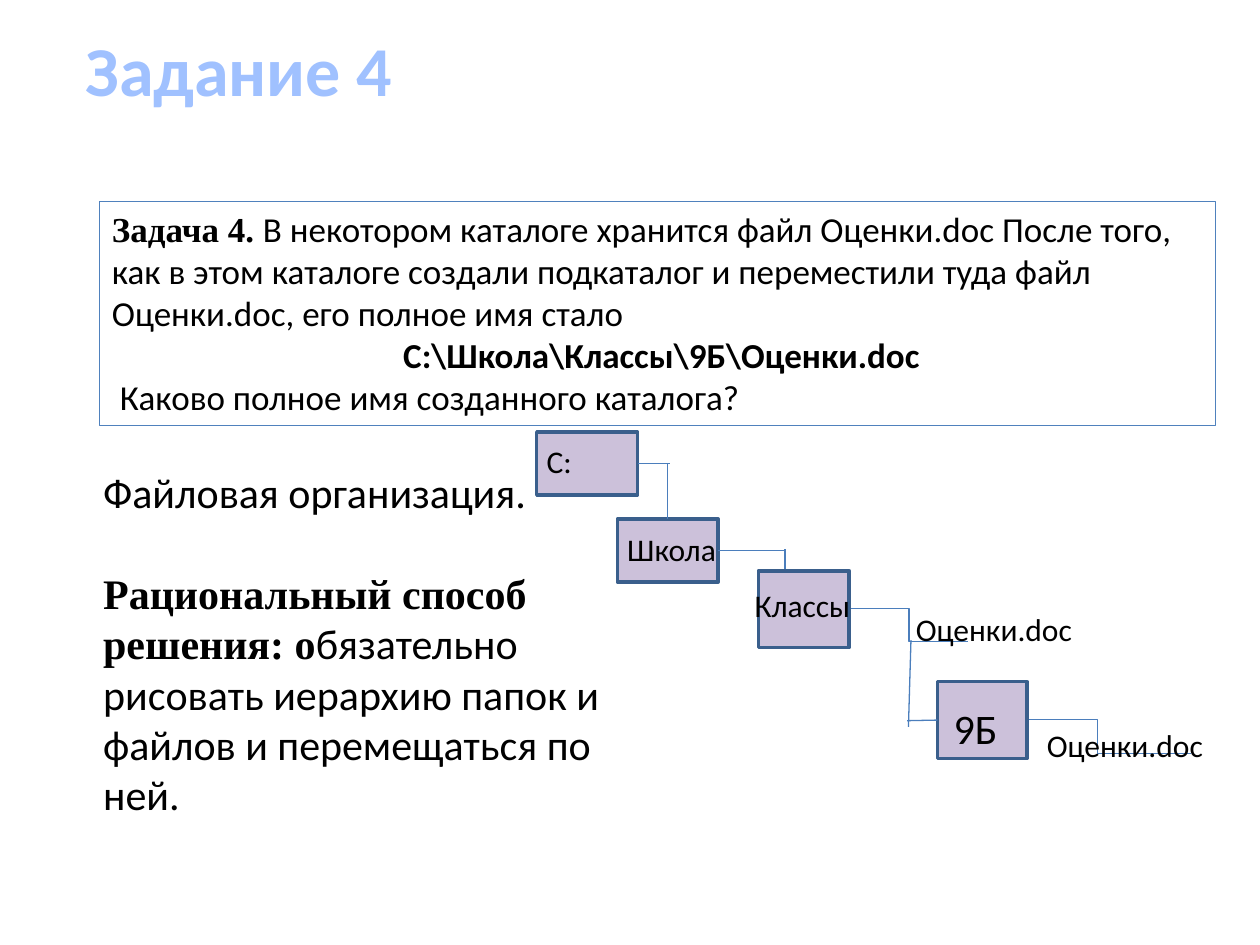
from dataclasses import dataclass

from pptx import Presentation
from pptx.dml.color import RGBColor
from pptx.enum.shapes import MSO_CONNECTOR as Link, MSO_SHAPE as Form
from pptx.enum.text import MSO_ANCHOR as Anchor, PP_ALIGN as Align
from pptx.oxml.ns import qn
from pptx.util import Inches, Pt
from lxml.etree import SubElement

BLACK = RGBColor(0, 0, 0)
WHITE = RGBColor(0xFF, 0xFF, 0xFF)
SKY = RGBColor(0xA0, 0xC1, 0xFF)
BLUE = RGBColor(0x4F, 0x81, 0xBD)
WIRE = RGBColor(0x4B, 0x7E, 0xBC)
EDGE = RGBColor(0x3A, 0x5F, 0x8C)
LILAC = RGBColor(0xCC, 0xC1, 0xDA)
SANS, SERIF = "Calibri", "Times New Roman"
TOP, LEFT, RIGHT = 0, 1, 3


@dataclass
class Run:
    text: str
    size: int
    name: str = SANS
    bold: bool = False
    color: RGBColor = BLACK


@dataclass
class Para:
    runs: list[Run]
    form: dict


@dataclass
class Rect:
    x: float
    y: float
    w: float
    h: float

    def place(self) -> list[int]:
        return [Inches(v) for v in (self.x, self.y, self.w, self.h)]


@dataclass
class Wire:
    start: tuple[float, float]
    end: tuple[float, float]
    kind: int = Link.STRAIGHT
    tail: tuple | None = None
    head: tuple | None = None


def fill_text(frame, paras: list[Para]) -> None:
    frame.word_wrap = True
    frame.vertical_anchor = Anchor.TOP
    for i, para in enumerate(paras):
        line = frame.add_paragraph() if i else frame.paragraphs[0]
        for key, value in ({"alignment": Align.LEFT} | para.form).items():
            setattr(line, key, value)
        for item in para.runs:
            run = line.add_run()
            run.text = item.text
            form = {"size": Pt(item.size), "name": item.name, "bold": item.bold}
            for key, value in form.items():
                setattr(run.font, key, value)
            run.font.color.rgb = item.color


def add_text(slide, area: Rect, paras: list[Para]) -> None:
    fill_text(slide.shapes.add_textbox(*area.place()).text_frame, paras)


def add_box(slide, area: Rect, fill: RGBColor, edge: RGBColor, width: float):
    box = slide.shapes.add_shape(Form.RECTANGLE, *area.place())
    box.shadow.inherit = False
    box.fill.solid()
    box.fill.fore_color.rgb = fill
    box.line.color.rgb = edge
    box.line.width = Pt(width)
    return box


def add_wire(slide, wire: Wire) -> None:
    ends = [Inches(v) for v in wire.start + wire.end]
    line = slide.shapes.add_connector(wire.kind, *ends)
    line.line.color.rgb = WIRE
    line.line.width = Pt(0.75)
    SubElement(line._element.spPr, qn("a:effectLst"))
    if wire.tail:
        line.begin_connect(*wire.tail)
    if wire.head:
        line.end_connect(*wire.head)


def main() -> None:
    deck = Presentation()
    deck.slide_width, deck.slide_height = Inches(10), Inches(7.5)
    slide = deck.slides.add_slide(deck.slide_layouts[6])

    title = Run("Задание 4", 40, bold=True, color=SKY)
    add_text(slide, Rect(0.58, 0.24, 8.62, 1.46),
             [Para([title], {"line_spacing": 0.9})])

    task = add_box(slide, Rect(0.79, 1.6, 8.86, 1.78), WHITE, BLUE, 0.75)
    fill_text(task.text_frame, [
        Para([Run("Задача 4. ", 20, SERIF, True),
              Run("В некотором каталоге хранится файл Оценки.doc После того, "
                  "как в этом каталоге создали подкаталог и переместили туда "
                  "файл Оценки.doc, его полное имя стало", 20)], {}),
        Para([Run(" С:\\Школа\\Классы\\9Б\\Оценки.doc", 20, bold=True)],
             {"alignment": Align.CENTER}),
        Para([Run(" Каково полное имя созданного каталога?", 20)], {}),
    ])
    add_text(slide, Rect(0.72, 3.65, 4.71, 4.71), [
        Para([Run("Файловая организация.", 24)], {}),
        Para([Run("Рациональный способ решения: о", 24, SERIF, True),
              Run("бязательно рисовать иерархию папок и файлов и "
                  "перемещаться по ней.", 24)], {"space_before": Pt(29)}),
    ])

    for wire in (Wire((6.75, 4.83), (7.68, 5.09), Link.ELBOW),
                 Wire((7.97, 5.71), (9.45, 5.98), Link.ELBOW)):
        add_wire(slide, wire)

    areas = (Rect(4.26, 3.43, 0.8, 0.5), Rect(4.9, 4.12, 0.8, 0.5),
             Rect(6.02, 4.53, 0.72, 0.61), Rect(7.44, 5.41, 0.71, 0.61))
    disk, school, _, group = [add_box(slide, area, LILAC, EDGE, 2)
                              for area in areas]

    for wire in (
        Wire((5.06, 3.68), (5.32, 3.68), tail=(disk, RIGHT)),
        Wire((5.3, 3.68), (5.3, 4.12), head=(school, TOP)),
        Wire((5.7, 4.37), (6.24, 4.37), tail=(school, RIGHT)),
        Wire((6.23, 4.36), (6.23, 4.52)),
        Wire((7.23, 5.08), (7.21, 5.77)),
        Wire((7.44, 5.72), (7.2, 5.72), tail=(group, LEFT)),
    ):
        add_wire(slide, wire)

    for text, size, area in (
        ("С:", 18, Rect(4.24, 3.46, 1.17, 0.4)),
        ("Школа", 18, Rect(4.88, 4.16, 1.17, 0.4)),
        ("Классы", 18, Rect(5.89, 4.6, 1.17, 0.4)),
        ("9Б", 24, Rect(7.47, 5.53, 1.17, 0.5)),
        ("Оценки.doc", 18, Rect(7.17, 4.79, 1.65, 0.4)),
        ("Оценки.doc", 18, Rect(8.21, 5.71, 1.77, 0.4)),
    ):
        add_text(slide, area, [Para([Run(text, size)], {})])

    deck.save("out.pptx")


if __name__ == "__main__":
    main()
